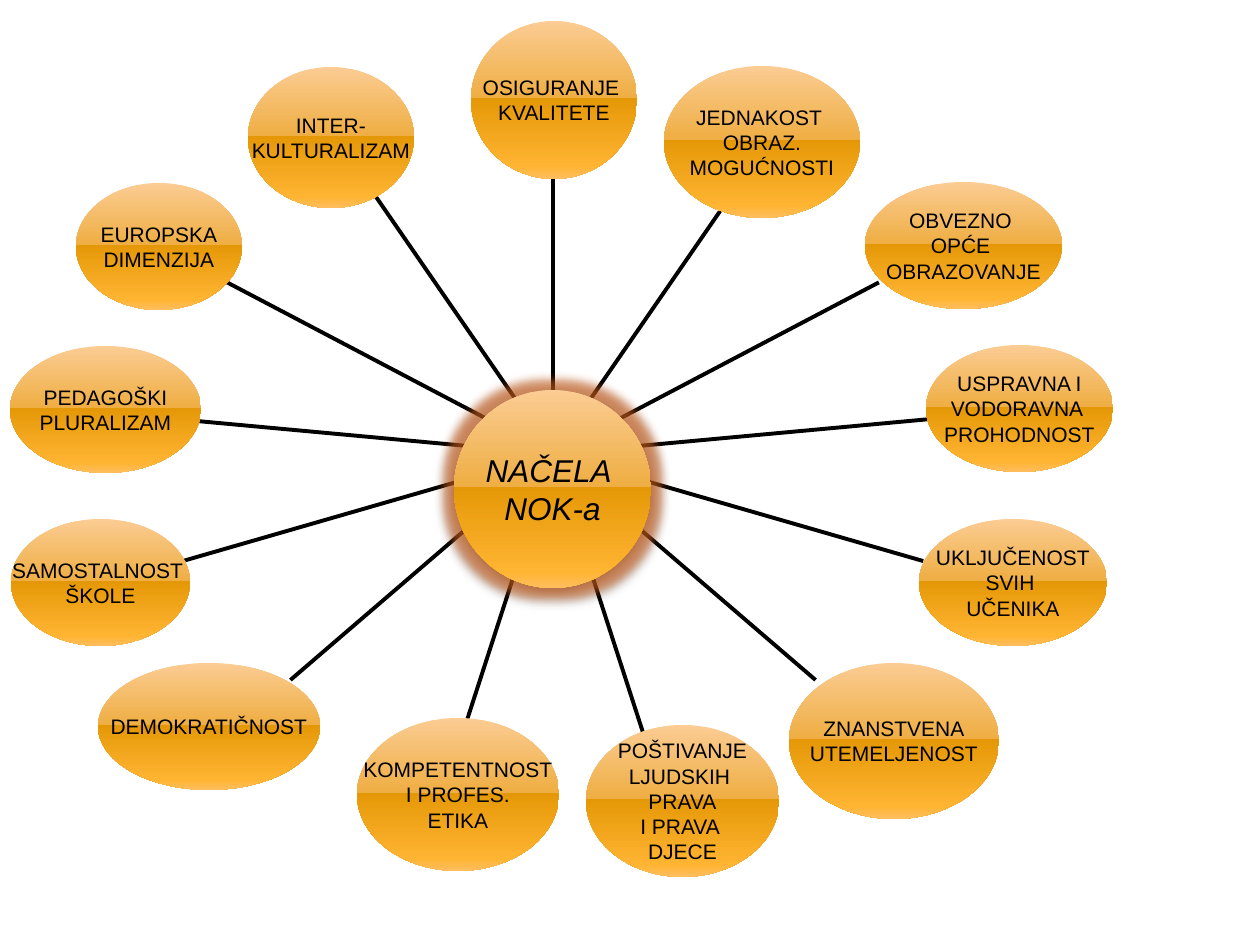
import math
from dataclasses import dataclass

import pptx
import pptx.dml.color
import pptx.enum.shapes
import pptx.enum.text
import pptx.oxml
import pptx.oxml.ns
import pptx.util

# Content: (lines of text, left, top, width, height), counterclockwise from the top
PRINCIPLES = [
    ("INTER-\nKULTURALIZAM", 248, 67, 166, 141),
    ("EUROPSKA\nDIMENZIJA", 76, 183, 166, 127),
    ("PEDAGOŠKI\nPLURALIZAM", 10, 346, 191, 127),
    ("SAMOSTALNOST \nŠKOLE", 11, 519, 179, 127),
    ("DEMOKRATIČNOST", 98, 663, 222, 127),
    ("KOMPETENTNOST\nI PROFES.\nETIKA", 357, 718, 202, 153),
    ("POŠTIVANJE\nLJUDSKIH \nPRAVA\nI PRAVA \nDJECE", 586, 725, 193, 152),
    ("ZNANSTVENA\nUTEMELJENOST", 789, 663, 210, 156),
    ("UKLJUČENOST\nSVIH \nUČENIKA", 919, 519, 188, 127),
    ("USPRAVNA I\nVODORAVNA \nPROHODNOST", 926, 345, 187, 127),
    ("OBVEZNO \nOPĆE \nOBRAZOVANJE", 865, 182, 197, 127),
    ("JEDNAKOST \nOBRAZ.\nMOGUĆNOSTI", 664, 66, 196, 152),
    ("OSIGURANJE \nKVALITETE", 471, 21, 166, 158),
]
HUB = ("NAČELA \nNOK-a", 454, 390, 197, 198)

# Spokes run between two concentric ellipses
CENTRE = (553, 454)
INNER_RADII = (82, 63)
OUTER_RADII = (396, 302)


@dataclass(frozen=True)
class Theme:
    font: str = "Arial"
    ink: str = "000000"
    glow: str = "D2611C"
    gradient: tuple = ((0, "FBCC93"), (49, "EFAE43"), (49, "E59807"),
                       (92, "FFB432"), (100, "FFBE5F"))
    label_size: int = 12
    hub_size: int = 18
    line_width: float = 2.25


THEME = Theme()
EMU_PER_PX = 914400 / 126
NAMESPACE = pptx.oxml.ns.nsdecls("a")


def px(value):
    return pptx.util.Emu(round(value * EMU_PER_PX))


def rgb(value):
    return pptx.dml.color.RGBColor.from_string(value)


def fill_gradient(shape):
    shape.fill.gradient()
    shape.fill.gradient_angle = 270
    stops = shape._element.spPr.find(".//" + pptx.oxml.ns.qn("a:gsLst"))
    for stop in list(stops):
        stops.remove(stop)
    for position, color in THEME.gradient:
        stops.append(pptx.oxml.parse_xml(
            f'<a:gs {NAMESPACE} pos="{position * 1000}"><a:srgbClr val="{color}"/></a:gs>'))


def add_ellipse(slide, text, left, top, width, height, size, italic=False):
    shape = slide.shapes.add_shape(
        pptx.enum.shapes.MSO_SHAPE.OVAL, px(left), px(top), px(width), px(height))
    shape.shadow.inherit = False
    fill_gradient(shape)
    shape.line.fill.background()
    frame = shape.text_frame
    frame.margin_left = frame.margin_right = frame.margin_top = frame.margin_bottom = 0
    frame.word_wrap = False
    frame.vertical_anchor = pptx.enum.text.MSO_ANCHOR.MIDDLE
    frame.text = text
    for paragraph in frame.paragraphs:
        paragraph.alignment = pptx.enum.text.PP_ALIGN.CENTER
        for run in paragraph.runs:
            run.font.name = THEME.font
            run.font.size = pptx.util.Pt(size)
            run.font.italic = italic
            run.font.color.rgb = rgb(THEME.ink)
    return shape


def ring_point(radii, angle):
    return (px(CENTRE[0] - radii[0] * math.sin(angle)),
            px(CENTRE[1] - radii[1] * math.cos(angle)))


def add_spoke(slide, angle):
    spoke = slide.shapes.add_connector(
        pptx.enum.shapes.MSO_CONNECTOR.STRAIGHT,
        *ring_point(INNER_RADII, angle), *ring_point(OUTER_RADII, angle))
    spoke.line.color.rgb = rgb(THEME.ink)
    spoke.line.width = pptx.util.Pt(THEME.line_width)
    spoke._element.spPr.append(pptx.oxml.parse_xml(f"<a:effectLst {NAMESPACE}/>"))


def add_glow_and_shadow(shape):
    effects = shape._element.spPr.find(pptx.oxml.ns.qn("a:effectLst"))
    effects.append(pptx.oxml.parse_xml(
        f'<a:glow {NAMESPACE} rad="139700"><a:srgbClr val="{THEME.glow}">'
        '<a:alpha val="60000"/></a:srgbClr></a:glow>'))
    effects.append(pptx.oxml.parse_xml(
        f'<a:outerShdw {NAMESPACE} blurRad="50800" dist="25400" dir="5400000" rotWithShape="0">'
        f'<a:srgbClr val="{THEME.ink}"><a:alpha val="45000"/></a:srgbClr></a:outerShdw>'))


def main():
    presentation = pptx.Presentation()
    presentation.slide_width, presentation.slide_height = px(1260), px(945)
    slide = presentation.slides.add_slide(presentation.slide_layouts[6])

    # Spokes with their principles
    for number, principle in enumerate(PRINCIPLES, start=1):
        add_spoke(slide, 2 * math.pi * number / len(PRINCIPLES))
        add_ellipse(slide, *principle, THEME.label_size)

    # Hub
    hub = add_ellipse(slide, *HUB, THEME.hub_size, italic=True)
    add_glow_and_shadow(hub)

    presentation.save("out.pptx")


if __name__ == "__main__":
    main()
